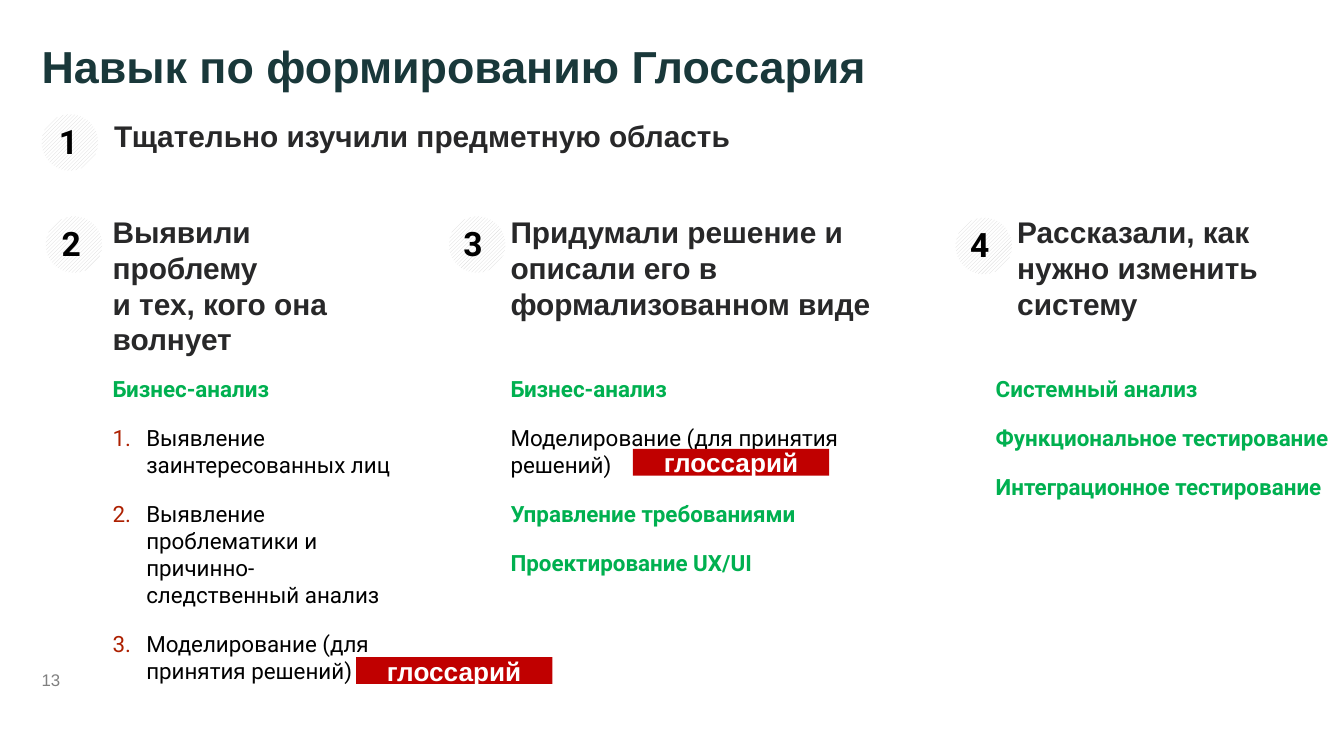
from dataclasses import dataclass

from lxml.etree import SubElement
from pptx import Presentation
from pptx.dml.color import RGBColor
from pptx.enum.dml import MSO_PATTERN
from pptx.enum.shapes import MSO_SHAPE as Shape
from pptx.enum.text import MSO_ANCHOR as Anchor, PP_ALIGN as Align
from pptx.oxml.ns import qn
from pptx.util import Inches, Pt

TEAL = RGBColor(0x19, 0x38, 0x3A)
GRAY = RGBColor(0x80, 0x80, 0x80)
LIGHT_GRAY = RGBColor(0xD9, 0xD9, 0xD9)
DARK = RGBColor(0x28, 0x28, 0x29)
GREEN = RGBColor(0x00, 0xB0, 0x50)
RED = RGBColor(0xC0, 0x00, 0x00)
BLACK = RGBColor(0, 0, 0)
WHITE = RGBColor(0xFF, 0xFF, 0xFF)
NUMBER_COLOR = RGBColor(0xAD, 0x20, 0x00)


@dataclass(frozen=True)
class Area:
    left: float
    top: float
    width: float
    height: float

    def lengths(self) -> list:
        return [Inches(value) for value in (self.left, self.top, self.width, self.height)]


@dataclass(frozen=True)
class Style:
    font: str
    size: int
    color: RGBColor
    bold: bool = True


@dataclass(frozen=True)
class Item:
    text: str
    green: bool = True
    numbered: bool = False


@dataclass(frozen=True)
class Step:
    number: str
    circle: tuple[float, float]
    number_left: float
    heading: str
    heading_area: Area


@dataclass(frozen=True)
class Topics:
    area: Area
    items: tuple[Item, ...]


TITLE = Style("Arial", 24, TEAL)
PAGE_NUMBER = Style("Arial", 9, GRAY, False)
HEADING = Style("Arial", 16, DARK)
STEP_NUMBER = Style("Roboto", 18, BLACK)
GREEN_ITEM = Style("Roboto", 12, GREEN)
PLAIN_ITEM = Style("Roboto", 12, BLACK, False)
TAG = Style("Arial", 14, WHITE)

STEPS = (
    Step("1", (0.31, 0.85), 0.34, "Тщательно изучили предметную область",
         Area(0.75, 0.83, 5.35, 0.37)),
    Step("2", (0.34, 1.61), 0.36, "Выявили проблему\nи тех, кого она волнует",
         Area(0.74, 1.54, 2.22, 1.18)),
    Step("3", (3.34, 1.61), 3.35, "Придумали решение и описали его в формализованном виде",
         Area(3.7, 1.54, 3.12, 0.91)),
    Step("4", (7.11, 1.62), 7.12, "Рассказали, как нужно изменить систему",
         Area(7.47, 1.54, 2.38, 0.91)),
)
TOPICS = (
    Topics(Area(0.74, 2.74, 2.33, 2.42), (
        Item("Бизнес-анализ"),
        Item("Выявление заинтересованных лиц", False, True),
        Item("Выявление проблематики и причинно-следственный анализ", False, True),
        Item("Моделирование (для принятия решений)", False, True),
    )),
    Topics(Area(3.7, 2.74, 2.69, 1.62), (
        Item("Бизнес-анализ"),
        Item("Моделирование (для принятия решений)", False),
        Item("Управление требованиями"),
        Item("Проектирование UX/UI"),
    )),
    Topics(Area(7.31, 2.74, 2.69, 1.45), (
        Item("Cистемный анализ"),
        Item("Функциональное тестирование"),
        Item("Интеграционное тестирование"),
    )),
)
TAG_AREAS = (Area(4.71, 3.34, 1.46, 0.2), Area(2.65, 4.89, 1.46, 0.2))


def format_spans(paragraph, style: Style) -> None:
    for span in paragraph.runs:
        span.font.name = style.font
        span.font.size = Pt(style.size)
        span.font.bold = style.bold
        span.font.color.rgb = style.color


def add_text(page, area: Area, text: str, style: Style, inset: bool = True, wrap: bool = True):
    box = page.shapes.add_textbox(*area.lengths())
    frame = box.text_frame
    frame.word_wrap = wrap
    if not inset:
        frame.margin_left = frame.margin_right = frame.margin_top = frame.margin_bottom = 0
    frame.text = text
    for paragraph in frame.paragraphs:
        format_spans(paragraph, style)
    return box


def add_numbering(paragraph) -> None:
    properties = paragraph._p.get_or_add_pPr()
    properties.set("marL", str(Inches(0.25)))
    properties.set("indent", str(-Inches(0.25)))
    color = SubElement(properties, qn("a:buClr"))
    SubElement(color, qn("a:srgbClr"), val=str(NUMBER_COLOR))
    SubElement(properties, qn("a:buFont"), typeface="+mj-lt")
    SubElement(properties, qn("a:buAutoNum"), type="arabicPeriod")


def add_topics(page, topics: Topics) -> None:
    text = "\n".join(item.text for item in topics.items)
    box = add_text(page, topics.area, text, GREEN_ITEM)
    for index, (paragraph, item) in enumerate(zip(box.text_frame.paragraphs, topics.items)):
        if item.numbered:
            add_numbering(paragraph)
        if index:
            paragraph.space_before = Pt(12)
        if not item.green:
            format_spans(paragraph, PLAIN_ITEM)


def add_step(page, step: Step) -> None:
    left, top = step.circle
    add_text(page, step.heading_area, step.heading, HEADING)
    circle = page.shapes.add_shape(Shape.OVAL, *Area(left, top, 0.42, 0.42).lengths())
    circle.shadow.inherit = False
    circle.line.fill.background()
    circle.fill.patterned()
    circle.fill.pattern = MSO_PATTERN.LIGHT_UPWARD_DIAGONAL
    circle.fill.fore_color.rgb = LIGHT_GRAY
    circle.fill.back_color.rgb = WHITE
    add_text(page, Area(step.number_left, top, 0.34, 0.4), step.number, STEP_NUMBER)


def add_tag(page, area: Area) -> None:
    tag = page.shapes.add_shape(Shape.RECTANGLE, *area.lengths())
    tag.shadow.inherit = False
    tag.fill.solid()
    tag.fill.fore_color.rgb = RED
    tag.line.fill.background()
    frame = tag.text_frame
    frame.text = "глоссарий"
    frame.vertical_anchor = Anchor.MIDDLE
    frame.paragraphs[0].alignment = Align.CENTER
    format_spans(frame.paragraphs[0], TAG)


def main() -> None:
    deck = Presentation()
    deck.slide_width = Inches(10)
    deck.slide_height = Inches(10 * 9 / 16)
    page = deck.slides.add_slide(deck.slide_layouts[6])
    add_text(page, Area(0.31, 0.29, 9.37, 0.87), "Навык по формированию Глоссария",
             TITLE, inset=False)
    number = add_text(page, Area(0.31, 4.78, 0.31, 0.35), "13", PAGE_NUMBER,
                      inset=False, wrap=False)
    number.text_frame.vertical_anchor = Anchor.BOTTOM
    for topics in TOPICS:
        add_topics(page, topics)
    for step in STEPS:
        add_step(page, step)
    for area in TAG_AREAS:
        add_tag(page, area)
    deck.save("out.pptx")


if __name__ == "__main__":
    main()
